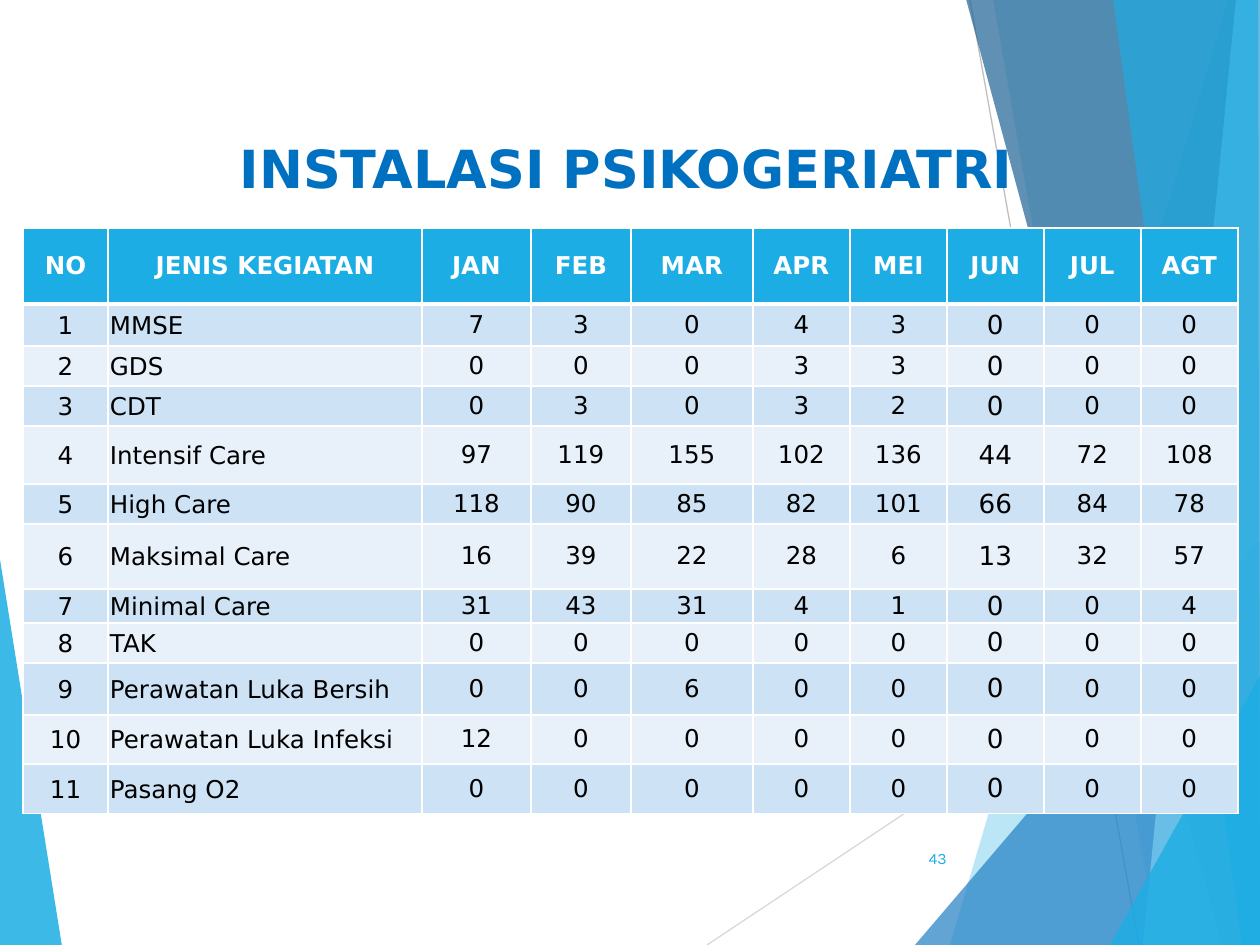
from lxml.etree import SubElement as Sub
from pptx import Presentation
from pptx.dml.color import RGBColor as RGB
from pptx.enum.text import MSO_ANCHOR as Anchor, PP_ALIGN as Align
from pptx.enum.shapes import MSO_CONNECTOR as Link
from pptx.oxml.ns import qn
from pptx.util import Emu, Pt

SCALE = 914400 / 126
WHITE = RGB(0xFF, 0xFF, 0xFF)
BLACK = RGB(0, 0, 0)
SKY = RGB(0x1C, 0xAD, 0xE4)
BLUE = RGB(0x26, 0x83, 0xC6)
NAVY = RGB(0x1D, 0x62, 0x94)
PALE = RGB(0x77, 0xCE, 0xEF)
INK = RGB(0x00, 0x70, 0xC0)
BANDS = (RGB(0xCD, 0xE3, 0xF5), RGB(0xE8, 0xF1, 0xFA))
GREY = RGB(0xD9, 0xD9, 0xD9)
DUSK = RGB(0xBF, 0xBF, 0xBF)
FONT = "DejaVu Sans"

TITLE = "INSTALASI PSIKOGERIATRI"
PAGE = "43"
HEADS = ["NO", "JENIS KEGIATAN", "JAN", "FEB", "MAR", "APR", "MEI", "JUN", "JUL", "AGT"]
CARE = [
    ("MMSE", 7, 3, 0, 4, 3, 0, 0, 0),
    ("GDS", 0, 0, 0, 3, 3, 0, 0, 0),
    ("CDT", 0, 3, 0, 3, 2, 0, 0, 0),
    ("Intensif Care", 97, 119, 155, 102, 136, 44, 72, 108),
    ("High Care", 118, 90, 85, 82, 101, 66, 84, 78),
    ("Maksimal Care", 16, 39, 22, 28, 6, 13, 32, 57),
    ("Minimal Care", 31, 43, 31, 4, 1, 0, 0, 4),
    ("TAK", 0, 0, 0, 0, 0, 0, 0, 0),
    ("Perawatan Luka Bersih", 0, 0, 6, 0, 0, 0, 0, 0),
    ("Perawatan Luka Infeksi", 12, 0, 0, 0, 0, 0, 0, 0),
    ("Pasang O2", 0, 0, 0, 0, 0, 0, 0, 0),
]
WIDTHS = [85, 314, 109, 100, 122] + [97] * 5
HEIGHTS = [76, 42, 40, 40, 58, 40, 65, 34, 40, 52, 49, 50]
NAME, JUN = HEADS.index("JENIS KEGIATAN"), HEADS.index("JUN")

LEFT = (SKY, 85, [(-1, 553), (62, 946), (-1, 945)])
RAYS = [((707, 945), (1261, 576), GREY), ((970, 0), (1139, 945), DUSK)]
SHARDS = [
    (SKY, 30, [(1228, 0), (950, 945), (1262, 946), (1261, 0)]),
    (SKY, 20, [(993, -1), (1158, 945), (1261, 945), (1261, -1)]),
    (BLUE, 72, [(915, 945), (1260, 541), (1261, 945)]),
    (NAVY, 70, [(966, -1), (1222, 945), (1261, 945), (1261, -1)]),
    (PALE, 70, [(1236, -1), (1143, 945), (1261, 945), (1260, -1)]),
    (SKY, 65, [(1113, -1), (1242, 945), (1260, 945), (1258, -1)]),
    (SKY, 80, [(1110, 945), (1261, 674), (1261, 945)]),
]


def px(num):
    return Emu(round(num * SCALE))


def put(obj, fmt):
    for key, val in fmt.items():
        setattr(obj, key, val)


def box(left, top, width, height):
    return {"left": px(left), "top": px(top), "width": px(width), "height": px(height)}


def pads(left, top, right, base):
    return {"margin_left": px(left), "margin_top": px(top),
            "margin_right": px(right), "margin_bottom": px(base)}


def write(frame, text, size, color, align, bold=False, face=FONT):
    para = frame.paragraphs[0]
    para.alignment = align
    run = para.add_run()
    run.text = text
    put(run.font, {"name": face, "size": Pt(size), "bold": bold})
    run.font.color.rgb = color


def shard(shapes, color, alpha, dots):
    pen = shapes.build_freeform(*dots[0], scale=SCALE)
    pen.add_line_segments(dots[1:], close=True)
    form = pen.convert_to_shape()
    form.shadow.inherit = False
    form.fill.solid()
    form.fill.fore_color.rgb = color
    tone = form._element.spPr.find(".//" + qn("a:srgbClr"))
    Sub(tone, qn("a:alpha"), val=str(alpha * 1000))
    form.line.fill.background()


def ray(shapes, start, end, color):
    line = shapes.add_connector(Link.STRAIGHT, *map(px, start + end))
    line.line.width = Pt(0.75)
    line.line.color.rgb = color
    Sub(line._element.spPr, qn("a:effectLst"))


def edge(cell, row):
    prop = cell._tc.get_or_add_tcPr()
    for side in "LRTB":
        thick = (side, row) in (("B", 0), ("T", 1))
        line = Sub(prop, qn("a:ln" + side), w=str(Pt(3 if thick else 1)))
        fill = Sub(line, qn("a:solidFill"))
        Sub(fill, qn("a:srgbClr"), val=str(WHITE))


def grid(shapes):
    rows = [HEADS] + [(num, *care) for num, care in enumerate(CARE, 1)]
    area = box(23, 228, sum(WIDTHS), sum(HEIGHTS))
    table = shapes.add_table(len(rows), len(HEADS), *area.values()).table
    for col, width in zip(table.columns, WIDTHS):
        col.width = px(width)
    for r, row in enumerate(rows):
        table.rows[r].height = px(HEIGHTS[r])
        for c, text in enumerate(row):
            cell = table.cell(r, c)
            head = r == 0
            inset = (19, 10, 19, 10) if head else (2, 2, 2, 0) if c <= NAME else (0,) * 4
            put(cell, {"vertical_anchor": Anchor.MIDDLE, **pads(*inset)})
            edge(cell, r)
            cell.fill.solid()
            cell.fill.fore_color.rgb = SKY if head else BANDS[(r - 1) % 2]
            write(cell.text_frame, str(text), 15 if c == JUN and not head else 14,
                  WHITE if head else BLACK,
                  Align.LEFT if c == NAME and not head else Align.CENTER, head)


def main():
    deck = Presentation()
    put(deck, {"slide_width": px(1260), "slide_height": px(945)})
    slide = deck.slides.add_slide(deck.slide_layouts[5])
    shapes = slide.shapes

    shard(shapes, *LEFT)
    for item in RAYS:
        ray(shapes, *item)
    for item in SHARDS:
        shard(shapes, *item)

    title = shapes.title
    shapes._spTree.append(title._element)
    put(title, box(53, 66, 1147, 133))
    put(title.text_frame, {"word_wrap": True, "vertical_anchor": Anchor.BOTTOM,
                           **pads(12, 0, 12, 0)})
    write(title.text_frame, TITLE, 30, INK, Align.CENTER, True)

    grid(shapes)

    page = shapes.add_textbox(*box(888, 833, 71, 50).values()).text_frame
    put(page, {"word_wrap": True, "vertical_anchor": Anchor.MIDDLE})
    write(page, PAGE, 9, SKY, Align.RIGHT, face="Karla")
    deck.save("out.pptx")


if __name__ == "__main__":
    main()
